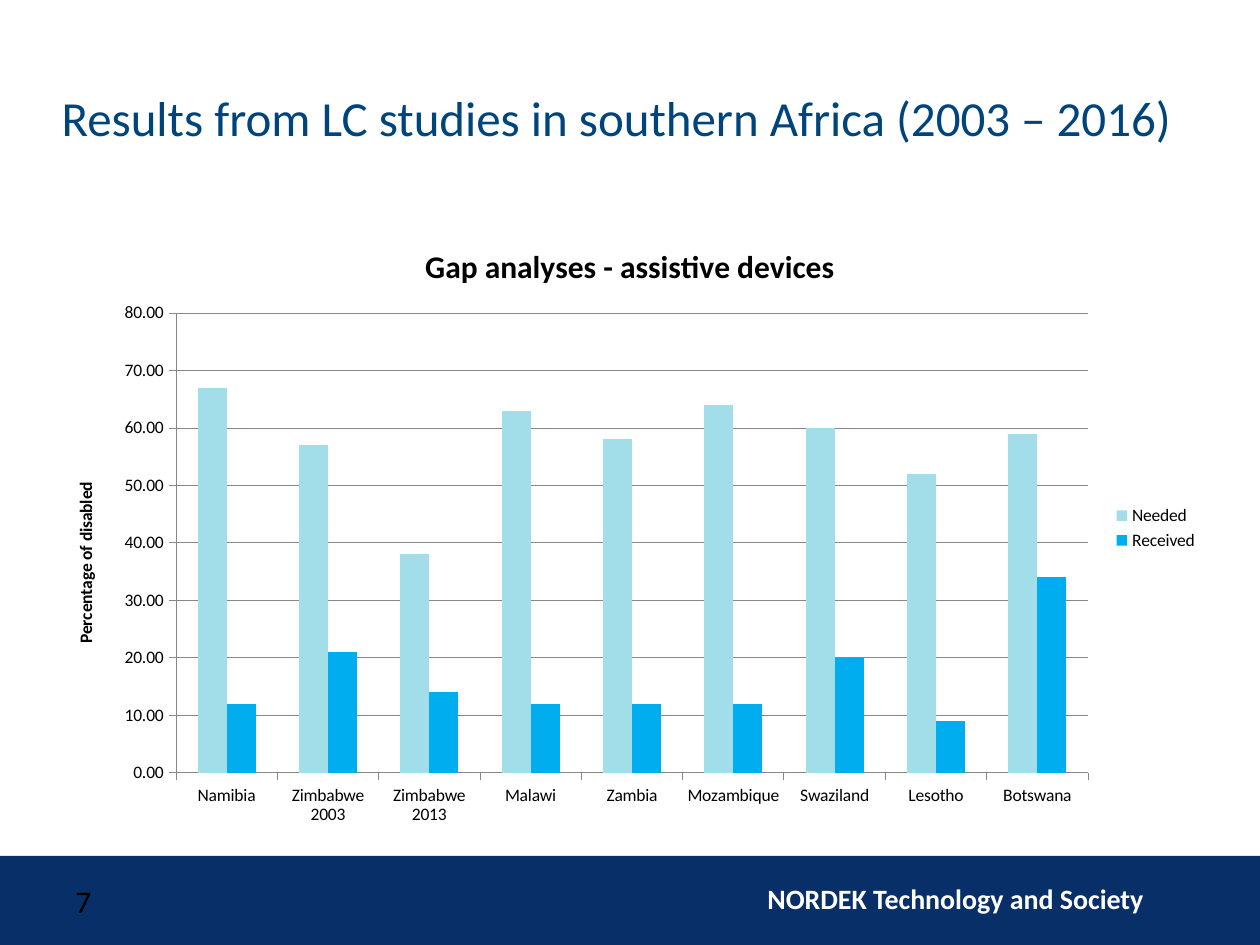
import pptx
import pptx.chart.data
import pptx.dml.color
import pptx.enum.chart
import pptx.enum.shapes
import pptx.enum.text
import pptx.oxml
import pptx.oxml.ns
import pptx.util

PX = 914400 / 126
FONT = "Calibri"
COLORS = {
    "band": "082F68",
    "heading": "00447C",
    "needed": "A1DEE9",
    "received": "00ADEF",
    "axis": "878787",
    "text": "000000",
    "light": "FFFFFF",
}
COUNTRIES = ["Namibia", "Zimbabwe 2003", "Zimbabwe 2013", "Malawi", "Zambia",
             "Mozambique", "Swaziland", "Lesotho", "Botswana"]
SHARES = {
    "Needed": [67, 57, 38, 63, 58, 64, 60, 52, 59],
    "Received": [12, 21, 14, 12, 12, 12, 20, 9, 34],
}


def emu(*lengths):
    return [pptx.util.Emu(round(length * PX)) for length in lengths]


def rgb(name):
    return pptx.dml.color.RGBColor.from_string(COLORS[name])


def set_font(font, size, color="text", bold=False):
    font.name = FONT
    font.size = pptx.util.Pt(size)
    font.bold = bold
    font.color.rgb = rgb(color)


def add_label(slide, box, text, size, color, bold=False, align=pptx.enum.text.PP_ALIGN.LEFT):
    label = slide.shapes.add_textbox(*emu(*box)).text_frame
    label.word_wrap = True
    paragraph = label.paragraphs[0]
    paragraph.text = text
    paragraph.alignment = align
    set_font(paragraph.font, size, color, bold)


def add_footer(slide, left, top, width, height):
    band = slide.shapes.add_shape(
        pptx.enum.shapes.MSO_SHAPE.RECTANGLE, *emu(left, top, width, height))
    band.shadow.inherit = False
    band.fill.solid()
    band.fill.fore_color.rgb = rgb("band")
    band.line.fill.background()
    add_label(slide, (left + 610, top + 19, 546, 47), "NORDEK Technology and Society",
              16, "light", True, pptx.enum.text.PP_ALIGN.RIGHT)
    add_label(slide, (left + 63, top + 20, 294, 50), "7", 18, "text")


def add_heading(slide, left, top, width, height):
    heading = slide.shapes.title
    heading.left, heading.top, heading.width, heading.height = emu(left, top, width, height)
    frame = heading.text_frame
    frame.text = "Results from LC studies in southern Africa (2003 – 2016)"
    frame.auto_size = pptx.enum.text.MSO_AUTO_SIZE.NONE
    frame.vertical_anchor = pptx.enum.text.MSO_ANCHOR.MIDDLE
    paragraph = frame.paragraphs[0]
    paragraph.alignment = pptx.enum.text.PP_ALIGN.LEFT
    set_font(paragraph.font, 28, "heading")


def set_layout(element, index, settings):
    for previous in element.findall(pptx.oxml.ns.qn("c:layout")):
        element.remove(previous)
    values = "".join(f'<c:{tag} val="{value}"/>' for tag, value in settings.items())
    element.insert(index, pptx.oxml.parse_xml(
        f'<c:layout {pptx.oxml.ns.nsdecls("c")}><c:manualLayout>{values}'
        '</c:manualLayout></c:layout>'))


def set_title(title, text, size):
    title.text_frame.text = text
    set_font(title.text_frame.paragraphs[0].font, size, bold=True)


def add_gap_chart(slide, left, top, width, height):
    data = pptx.chart.data.CategoryChartData(number_format="0.00")
    data.categories = COUNTRIES
    for name, values in SHARES.items():
        data.add_series(name, values)
    chart = slide.shapes.add_chart(
        pptx.enum.chart.XL_CHART_TYPE.COLUMN_CLUSTERED,
        *emu(left, top, width, height), data).chart
    set_font(chart.font, 10)
    chart.has_title = True
    set_title(chart.chart_title, "Gap analyses - assistive devices", 18)
    chart.has_legend = True
    chart.legend.position = pptx.enum.chart.XL_LEGEND_POSITION.RIGHT
    chart.legend.include_in_layout = False

    plot = chart.plots[0]
    plot.gap_width = 150
    plot.overlap = 0
    plot.vary_by_categories = False
    for series in plot.series:
        series.format.fill.solid()
        series.format.fill.fore_color.rgb = rgb(series.name.lower())

    shares = chart.value_axis
    shares.minimum_scale, shares.maximum_scale, shares.major_unit = 0, 80, 10
    shares.tick_labels.number_format = "0.00"
    shares.tick_labels.number_format_is_linked = False
    shares.has_major_gridlines = True
    set_title(shares.axis_title, "Percentage of disabled", 10)
    for line in (shares.format.line, chart.category_axis.format.line,
                 shares.major_gridlines.format.line):
        line.color.rgb = rgb("axis")
        line.width = pptx.util.Pt(0.5)
    for axis in (shares, chart.category_axis):
        axis.major_tick_mark = pptx.enum.chart.XL_TICK_MARK.OUTSIDE

    plot_area = chart.element.find(".//" + pptx.oxml.ns.qn("c:plotArea"))
    set_layout(plot_area, 0, {
        "layoutTarget": "inner", "xMode": "edge", "yMode": "edge",
        "x": round(127 / width, 4), "y": round(93 / height, 4),
        "w": round(912 / width, 4), "h": round(460 / height, 4)})
    set_layout(shares.axis_title.element, 1, {
        "xMode": "edge", "yMode": "edge",
        "x": round(22 / width, 4), "y": round(259 / height, 4)})


def main():
    deck = pptx.Presentation()
    deck.slide_width, deck.slide_height = emu(1260, 945)
    slide = deck.slides.add_slide(deck.slide_layouts[5])
    add_footer(slide, 0, 856, 1260, 89)
    add_heading(slide, 49, 38, 1162, 158)
    add_gap_chart(slide, 49, 220, 1162, 616)
    deck.save("out.pptx")


if __name__ == "__main__":
    main()
